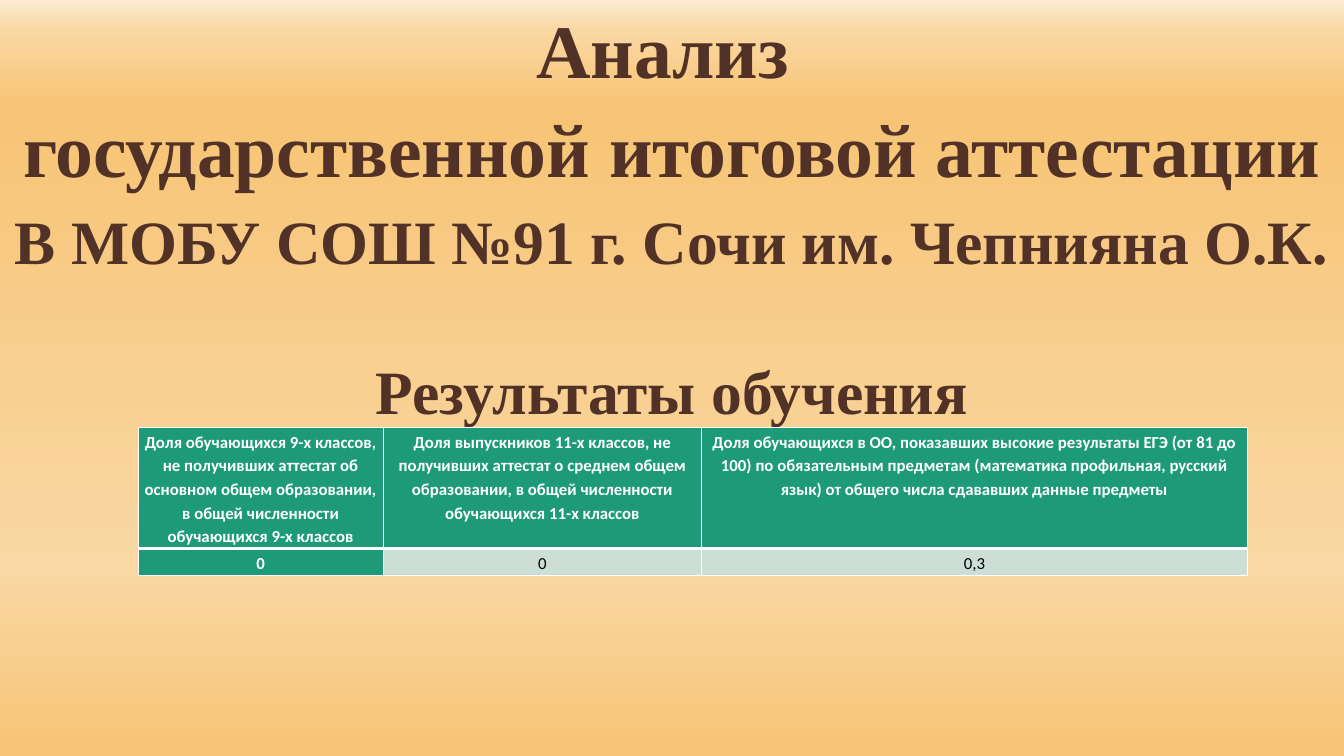
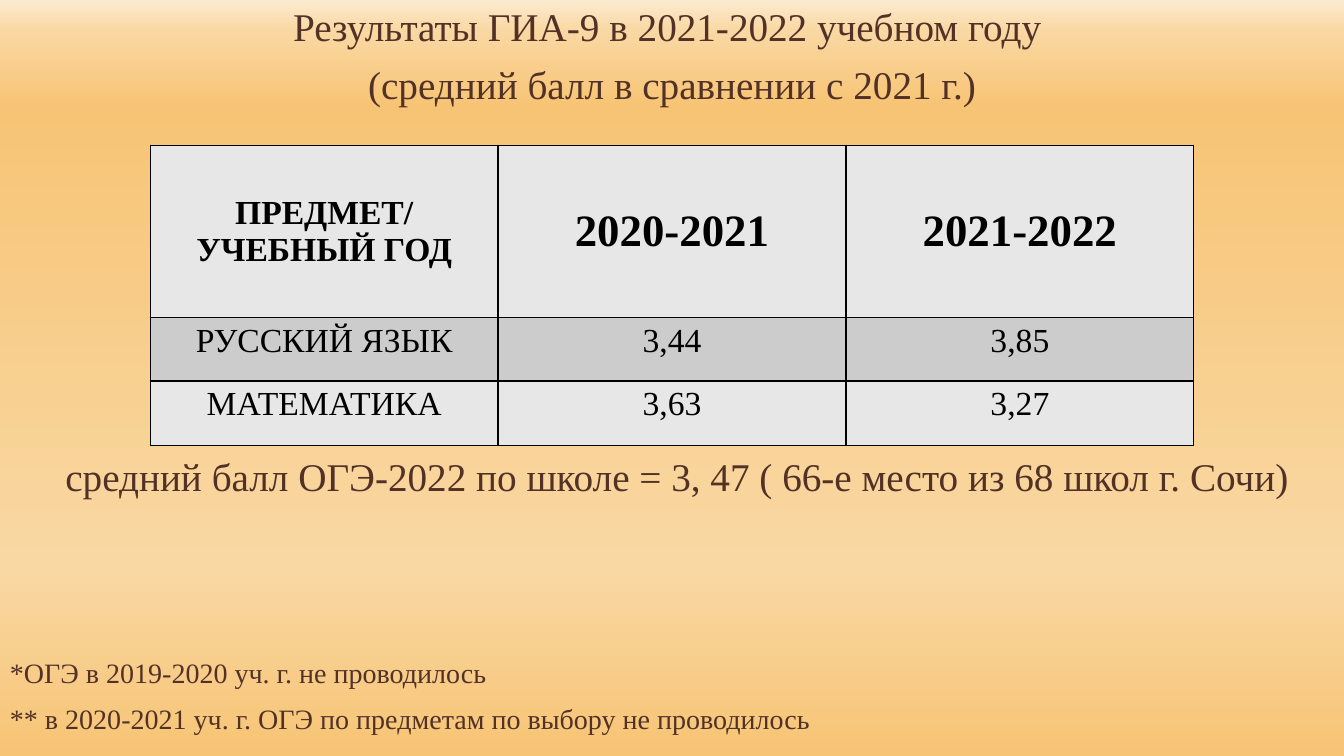
from lxml.etree import SubElement as Sub
from pptx import Presentation as Deck
from pptx.dml.color import RGBColor as Rgb
from pptx.enum.text import MSO_ANCHOR as Anchor, PP_ALIGN as Align
from pptx.oxml.ns import qn
from pptx.util import Inches, Pt

HUES = {
    "brown": "523227", "white": "FFFFFF", "black": "000000",
    "green": "1D9A78", "mint": "CDDED6", "light": "E7E7E7", "gray": "CCCCCC",
    "cream": "FCEBD1", "sand": "FAD8A3", "amber": "F7C475", "peach": "F9D8A3",
}
STOPS = [(0, "cream"), (4, "sand"), (14, "amber"), (75, "peach"), (100, "amber")]
SERIF = "Times New Roman"
SANS = "Calibri"


def dress(item, style):
    for name, value in style.items():
        setattr(item, name, value)


def paint(parent, hue):
    Sub(parent, qn("a:srgbClr"), val=HUES[hue])


class Show:
    def __init__(self):
        self.deck = Deck()
        dress(self.deck, {"slide_width": Inches(13.33), "slide_height": Inches(7.5)})
        self.slide = None
        self.back()

    def back(self):
        master = self.deck.slide_master
        fill = master.background.fill
        fill.gradient()
        fill.gradient_angle = 270
        stops = master.element.find(".//" + qn("a:gsLst"))
        for old in list(stops):
            stops.remove(old)
        for place, hue in STOPS:
            paint(Sub(stops, qn("a:gs"), pos=str(place * 1000)), hue)

    def page(self):
        self.slide = self.deck.slides.add_slide(self.deck.slide_layouts[6])

    def label(self, para, text, hue, size, font=SERIF, bold=False, align=Align.CENTER):
        para.alignment = align
        run = para.add_run()
        run.text = text
        dress(run.font, {"size": Pt(size), "name": font, "bold": bold})
        run.font.color.rgb = Rgb.from_string(HUES[hue])

    def text(self, top, high, lines, **style):
        box = self.slide.shapes.add_textbox(0, Inches(top), self.deck.slide_width, Inches(high))
        frame = box.text_frame
        dress(frame, {"word_wrap": True, "margin_top": 0, "margin_bottom": 0})
        for order, (line, size) in enumerate(lines):
            para = frame.add_paragraph() if order else frame.paragraphs[0]
            dress(para, {"line_spacing": 0.94, "space_before": Pt(10 if order else 0)})
            self.label(para, line, "brown", size, **style)

    def edge(self, cell, hue, base):
        props = cell._tc.get_or_add_tcPr()
        for side in "LRTB":
            width = Pt(base if side == "B" else 1)
            line = Sub(props, qn("a:ln" + side), w=str(int(width)))
            paint(Sub(line, qn("a:solidFill")), hue)

    def table(self, left, top, cols, rows, data, look):
        grid = self.slide.shapes.add_table(
            len(rows), len(cols), Inches(left), Inches(top),
            Inches(sum(cols)), Inches(sum(rows))).table
        for col, wide in zip(grid.columns, cols):
            col.width = Inches(wide)
        for row, high in zip(grid.rows, rows):
            row.height = Inches(high)
        for y, texts in enumerate(data):
            for x, text in enumerate(texts):
                cell = grid.cell(y, x)
                fill, line, base, gaps, space, style = look(y, x)
                self.edge(cell, line, base)
                cell.fill.solid()
                cell.fill.fore_color.rgb = Rgb.from_string(HUES[fill])
                dress(cell, gaps)
                para = cell.text_frame.paragraphs[0]
                para.line_spacing = space
                self.label(para, text, **style)


def share(y, x):
    head = y == 0 or x == 0
    side, edge = Inches(0.03), Inches(0.02)
    gaps = {"margin_left": side, "margin_right": side,
            "margin_top": edge, "margin_bottom": edge}
    style = {"hue": "white" if head else "black", "size": 12, "font": SANS, "bold": head}
    return "green" if head else "mint", "white", 1 if y else 3, gaps, 1.15, style


def score(y, x):
    head = y == 0
    gaps = {"vertical_anchor": Anchor.MIDDLE if head else Anchor.TOP}
    style = {"hue": "black", "size": 32 if head and x else 24, "bold": head}
    return "gray" if y % 2 else "light", "black", 1, gaps, 1.0, style


def main():
    show = Show()

    show.page()
    show.text(0.1, 2.7, [
        ("Анализ ", 54),
        ("государственной итоговой аттестации", 54),
        ("В МОБУ СОШ №91 г. Сочи им. Чепнияна О.К.", 44),
    ], bold=True)
    show.text(3.56, 0.68, [("Результаты обучения", 44)], bold=True)
    show.table(1.37, 4.24, [2.43, 3.16, 5.41], [1.2, 0.27], [
        ["Доля обучающихся 9-х классов, не получивших аттестат об основном общем "
         "образовании, в общей численности обучающихся 9-х классов",
         "Доля выпускников 11-х классов, не получивших аттестат о среднем общем "
         "образовании, в общей численности обучающихся 11-х классов",
         "Доля обучающихся в ОО, показавших высокие результаты ЕГЭ (от 81 до 100) "
         "по обязательным предметам (математика профильная, русский язык) "
         "от общего числа сдававших данные предметы"],
        ["0", "0", "0,3"],
    ], share)

    show.page()
    show.text(0.06, 1.1, [
        ("Результаты ГИА-9 в 2021-2022 учебном году ", 28),
        ("(средний балл в сравнении с 2021 г.)", 28),
    ])
    show.table(1.49, 1.44, [3.45] * 3, [1.71, 0.63, 0.64], [
        ["ПРЕДМЕТ/ УЧЕБНЫЙ ГОД", "2020-2021", "2021-2022"],
        ["РУССКИЙ ЯЗЫК", "3,44", "3,85"],
        ["МАТЕМАТИКА", "3,63", "3,27"],
    ], score)
    show.text(4.53, 0.5, [
        (" средний балл ОГЭ-2022 по школе = 3, 47 ( 66-е место из 68 школ г. Сочи)", 28),
    ])
    show.text(6.53, 0.9, [
        ("*ОГЭ в 2019-2020 уч. г. не проводилось", 20),
        ("** в 2020-2021 уч. г. ОГЭ по предметам по выбору не проводилось", 20),
    ], align=Align.LEFT)

    show.deck.save("out.pptx")


if __name__ == "__main__":
    main()
